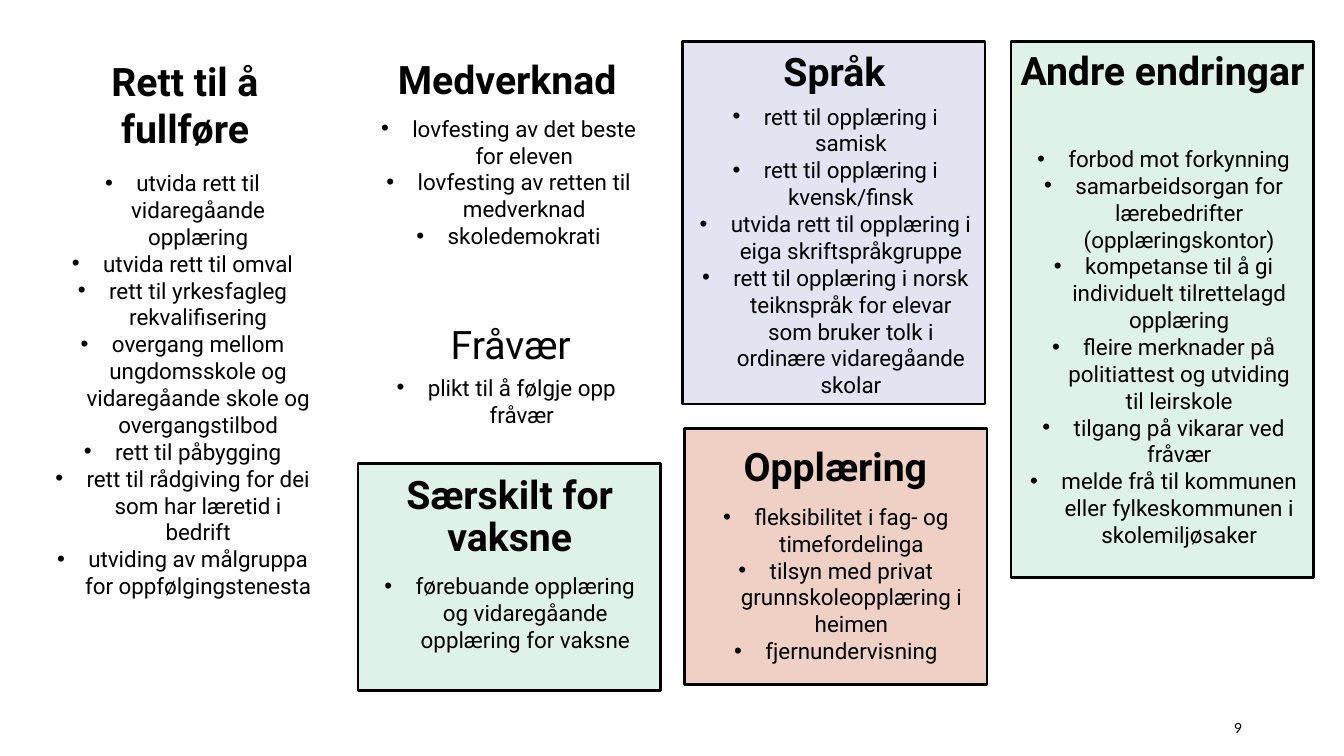
from dataclasses import dataclass

from lxml import etree
from pptx import Presentation
from pptx.dml.color import RGBColor
from pptx.enum.shapes import MSO_SHAPE
from pptx.enum.text import MSO_ANCHOR, PP_ALIGN
from pptx.oxml.ns import qn
from pptx.util import Pt

RECT = MSO_SHAPE.RECTANGLE
TOP, MIDDLE = MSO_ANCHOR.TOP, MSO_ANCHOR.MIDDLE
CENTER, RIGHT = PP_ALIGN.CENTER, PP_ALIGN.RIGHT
SCALE = 9144
BULLET_INDENT = 31


@dataclass(frozen=True)
class Theme:
    ink: str = "000000"
    green: str = "DEF2E7"
    lilac: str = "E2E4F1"
    peach: str = "EED0C4"
    font: str = "Roboto"
    number_font: str = "Lato"
    heading: int = 28
    body: int = 16
    number: int = 10
    outline: float = 1.75


THEME = Theme()

PANELS = [
    ((355, 460, 300, 225), THEME.green),
    ((677, 41, 300, 360), THEME.lilac),
    ((679, 425, 300, 254), THEME.peach),
    ((1003, 41, 300, 532), THEME.green),
]

HEADINGS = [
    ("Rett til å fullføre", (33, 52, 301, 104), True, 1.0),
    ("Fråvær", (357, 313, 299, 57), False, 1.0),
    ("Medverknad", (353, 55, 300, 53), True, 0.9),
    ("Særskilt for vaksne", (356, 467, 299, 95), True, 0.9),
    ("Språk", (677, 47, 301, 53), True, 0.9),
    ("Opplæring", (678, 439, 301, 53), True, 0.9),
    ("Andre endringar", (1001, 46, 304, 95), True, 0.9),
]

LISTS = [
    ((40, 163, 282, 472), [
        "utvida rett til vidaregåande opplæring",
        "utvida rett til omval",
        "rett til yrkesfagleg rekvalifisering",
        "overgang mellom ungdomsskole og vidaregåande skole og overgangstilbod",
        "rett til påbygging",
        "rett til rådgiving for dei som har læretid i bedrift",
        "utviding av målgruppa for oppfølgingstenesta",
    ]),
    ((356, 109, 297, 173), [
        "lovfesting av det beste for eleven",
        "lovfesting av retten til medverknad",
        "skoledemokrati",
    ]),
    ((361, 366, 282, 76), ["plikt til å følgje opp fråvær"]),
    ((682, 494, 294, 178), [
        "fleksibilitet i fag- og timefordelinga",
        "tilsyn med privat grunnskoleopplæring i heimen",
        "fjernundervisning",
    ]),
    ((681, 97, 295, 276), [
        "rett til opplæring i samisk",
        "rett til opplæring i kvensk/finsk",
        "utvida rett til opplæring i eiga skriftspråkgruppe",
        "rett til opplæring i norsk teiknspråk for elevar som bruker tolk i "
        "ordinære vidaregåande skolar",
    ]),
    ((357, 563, 297, 106), [
        "førebuande opplæring og vidaregåande opplæring for vaksne",
    ]),
    ((1010, 139, 288, 336), [
        "forbod mot forkynning",
        "samarbeidsorgan for lærebedrifter (opplæringskontor)",
        "kompetanse til å gi individuelt tilrettelagd opplæring",
        "fleire merknader på politiattest og utviding til leirskole",
        "tilgang på vikarar ved fråvær",
        "melde frå til kommunen eller fylkeskommunen i skolemiljøsaker",
    ]),
]


def px(*lengths):
    return [length * SCALE for length in lengths]


def apply(target, values):
    for name, value in values.items():
        setattr(target, name, value)


class SlideBuilder:
    """Draws themed panels and text on one slide."""

    def __init__(self, s, theme):
        self.s = s
        self.theme = theme

    def panel(self, box, fill):
        sp = self.s.shapes.add_shape(RECT, *px(*box))
        sp.shadow.inherit = False
        sp.fill.solid()
        sp.fill.fore_color.rgb = RGBColor.from_string(fill)
        sp.line.color.rgb = RGBColor.from_string(self.theme.ink)
        sp.line.width = Pt(self.theme.outline)

    def text(self, box, lines, size, bold=False, spacing=1.0, align=CENTER,
             anchor=TOP, font=None):
        tf = self.s.shapes.add_textbox(*px(*box)).text_frame
        apply(tf, {"word_wrap": True, "vertical_anchor": anchor})
        for i, line in enumerate(lines):
            p = tf.add_paragraph() if i else tf.paragraphs[0]
            apply(p, {"alignment": align, "line_spacing": spacing})
            r = p.add_run()
            r.text = line
            apply(r.font, {"name": font or self.theme.font, "size": Pt(size), "bold": bold})
            r.font.color.rgb = RGBColor.from_string(self.theme.ink)
        return tf

    def heading(self, title, box, bold, spacing):
        self.text(box, [title], self.theme.heading, bold, spacing)

    def bullets(self, box, lines):
        tf = self.text(box, lines, self.theme.body)
        indent, = px(BULLET_INDENT)
        for p in tf.paragraphs:
            pPr = p._p.get_or_add_pPr()
            pPr.set("marL", str(indent))
            pPr.set("indent", str(-indent))
            etree.SubElement(pPr, qn("a:buFont"), typeface="Arial")
            etree.SubElement(pPr, qn("a:buChar"), char="•")

    def page_number(self, number, box):
        self.text(box, [number], self.theme.number, align=RIGHT, anchor=MIDDLE,
                  font=self.theme.number_font)


def main():
    prs = Presentation()
    prs.slide_width, prs.slide_height = px(1333, 750)
    s = prs.slides.add_slide(prs.slide_layouts[6])
    builder = SlideBuilder(s, THEME)
    for panel in PANELS:
        builder.panel(*panel)
    for bullet_list in LISTS:
        builder.bullets(*bullet_list)
    for heading in HEADINGS:
        builder.heading(*heading)
    builder.page_number("9", (942, 702, 300, 40))
    prs.save("out.pptx")


if __name__ == "__main__":
    main()
